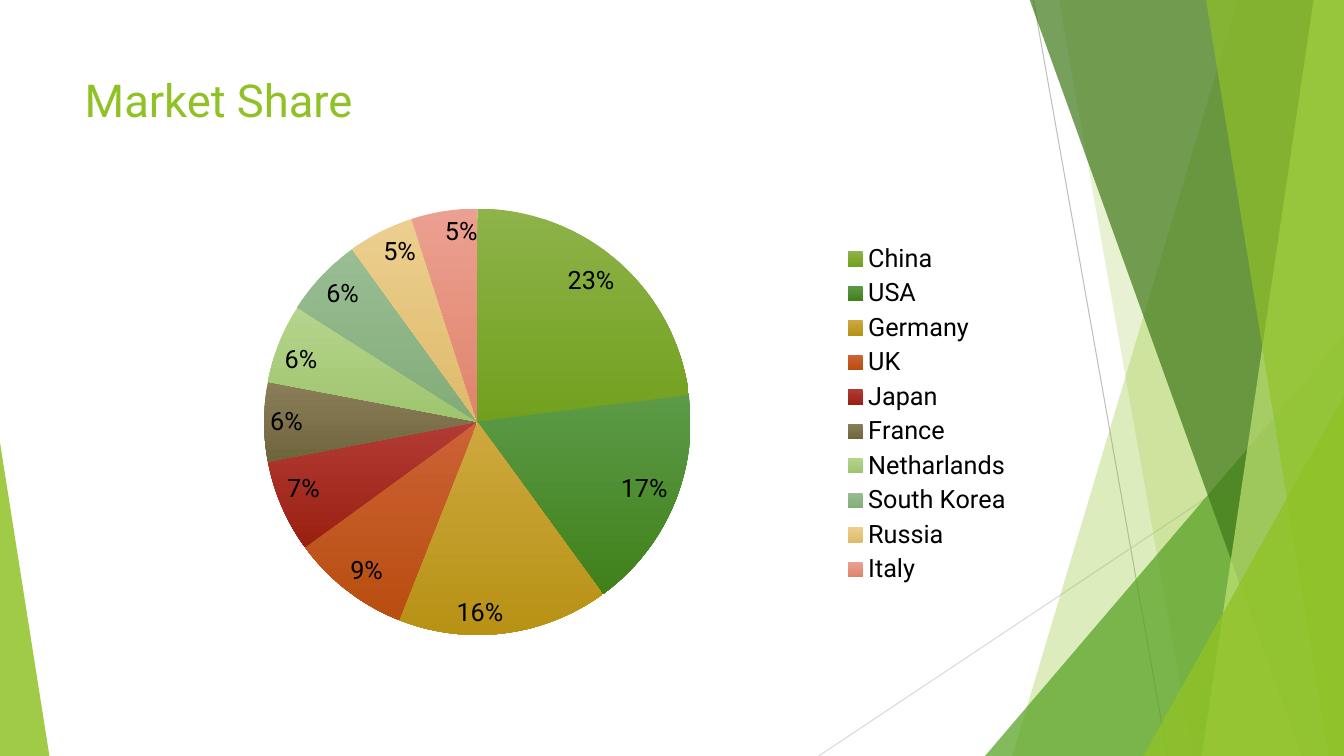
"""Build the Market Share slide: a pie chart beside a faceted green border."""
from lxml import etree
from pptx import Presentation
from pptx.chart.data import CategoryChartData
from pptx.dml.color import RGBColor
from pptx.enum.chart import XL_CHART_TYPE as ChartType
from pptx.enum.chart import XL_LABEL_POSITION as LabelPosition
from pptx.enum.chart import XL_LEGEND_POSITION as LegendPosition
from pptx.enum.shapes import MSO_CONNECTOR as Connector
from pptx.enum.shapes import MSO_SHAPE as Shape
from pptx.enum.text import MSO_ANCHOR as Anchor
from pptx.enum.text import MSO_AUTO_SIZE as AutoSize
from pptx.enum.text import PP_ALIGN as Align
from pptx.oxml.ns import qn
from pptx.util import Inches, Pt

WIDTH, HEIGHT, TOP = 13.33, 7.5, -0.01
THEME = {
    "font": "Roboto",
    "title_size": Pt(32.4),
    "chart_size": Pt(18),
    "text": "000000",
    "lime": "90C226",
    "green": "54A021",
    "forest": "3F7819",
    "pale": "C0E474",
    "dark_line": "BFBFBF",
    "light_line": "D9D9D9",
}
MARKET = [
    ("China", 23, "8DB349", "72A01E"),
    ("USA", 17, "5C9A47", "40811A"),
    ("Germany", 16, "CEA83E", "B79214"),
    ("UK", 9, "CC6236", "B94E10"),
    ("Japan", 7, "B23B35", "9A2011"),
    ("France", 6, "8A7E58", "6F653D"),
    ("Netharlands", 6, "B5D48C", "9FC56F"),
    ("South Korea", 6, "9ABD94", "82AC78"),
    ("Russia", 5, "ECCF8F", "DEBA6A"),
    ("Italy", 5, "ECA091", "DF846C"),
]
LINES = [
    (10.25, 0, 11.58, HEIGHT, "dark_line"),
    (WIDTH, 4.03, 8.12, HEIGHT, "light_line"),
]
FACETS = [
    ("band", 12.28, 10.04, "lime", 30),
    ("band", 10.5, 11.83, "lime", 20),
    ("triangle", (9.77, 3.33, 3.56, 4.17), 1, "green", 72),
    ("band", 10.21, 12.91, "forest", 70),
    ("band", 13.03, 11.92, "pale", 70),
    ("band", 11.96, 13.18, "lime", 65),
    ("triangle", (11.34, 3.93, 1.99, 3.57), 1, "lime", 80),
    ("triangle", (0, 4.39, 0.49, 3.11), 0, "lime", 85),
]


def paint(shape, color, opacity):
    """Give a shape a see-through fill without outline or shadow."""
    shape.shadow.inherit = False
    shape.line.fill.background()
    shape.fill.solid()
    shape.fill.fore_color.rgb = RGBColor.from_string(THEME[color])
    rgb = shape._element.spPr.find(qn("a:solidFill")).find(qn("a:srgbClr"))
    etree.SubElement(rgb, qn("a:alpha"), val=str(opacity * 1000))


def set_font(font, size, color):
    """Apply the theme font with a size and a colour."""
    for name, value in {"name": THEME["font"], "size": size, "bold": False}.items():
        setattr(font, name, value)
    font.color.rgb = RGBColor.from_string(color)


presentation = Presentation()
presentation.slide_width = Inches(WIDTH)
presentation.slide_height = Inches(HEIGHT)
slide = presentation.slides.add_slide(presentation.slide_layouts[5])

for x1, y1, x2, y2, color in LINES:
    ends = [Inches(value) for value in (x1, y1, x2, y2)]
    connector = slide.shapes.add_connector(Connector.STRAIGHT, *ends)
    connector.line.width = Pt(0.75)
    connector.line.color.rgb = RGBColor.from_string(THEME[color])
    etree.SubElement(connector._element.spPr, qn("a:effectLst"))

for kind, first, second, color, opacity in FACETS:
    if kind == "band":
        builder = slide.shapes.build_freeform(Inches(first), Inches(TOP))
        corners = [(WIDTH, TOP), (WIDTH, HEIGHT), (second, HEIGHT)]
        builder.add_line_segments([(Inches(x), Inches(y)) for x, y in corners])
        facet = builder.convert_to_shape()
    else:
        box = [Inches(value) for value in first]
        facet = slide.shapes.add_shape(Shape.ISOSCELES_TRIANGLE, *box)
        facet.adjustments[0] = second
    paint(facet, color, opacity)

title = slide.shapes.title
for name, value in {"left": 0.74, "top": 0.67, "width": 9.4, "height": 0.55}.items():
    setattr(title, name, Inches(value))
title.text_frame.text = "Market Share"
title.text_frame.auto_size = AutoSize.NONE
title.text_frame.vertical_anchor = Anchor.TOP
paragraph = title.text_frame.paragraphs[0]
paragraph.alignment = Align.LEFT
set_font(paragraph.runs[0].font, THEME["title_size"], THEME["lime"])

chart_data = CategoryChartData()
chart_data.categories = [country for country, *_ in MARKET]
chart_data.add_series("Series 1", [share for _, share, *_ in MARKET])
chart = slide.shapes.add_chart(
    ChartType.PIE, Inches(0.74), Inches(1.61), Inches(9.4), Inches(5), chart_data
).chart
chart.has_title = False
set_font(chart.font, THEME["chart_size"], THEME["text"])
chart.has_legend = True
chart.legend.position = LegendPosition.RIGHT
chart.legend.include_in_layout = False

plot = chart.plots[0]
plot.vary_by_categories = True
plot.has_data_labels = True
label_format = {
    "show_percentage": True,
    "show_value": False,
    "number_format": "0%",
    "number_format_is_linked": False,
    "position": LabelPosition.INSIDE_END,
}
for name, value in label_format.items():
    setattr(plot.data_labels, name, value)
set_font(plot.data_labels.font, THEME["chart_size"], THEME["text"])

for index, (_, _, *shades) in enumerate(MARKET):
    slice_format = plot.series[0].points[index].format
    slice_format.line.fill.background()
    slice_format.fill.gradient()
    slice_format.fill.gradient_angle = 270
    for stop, shade in zip(slice_format.fill.gradient_stops, shades):
        stop.color.rgb = RGBColor.from_string(shade)

plot_area = chart._chartSpace.chart.plotArea
for old_layout in plot_area.findall(qn("c:layout")):
    plot_area.remove(old_layout)
layout = etree.Element(qn("c:layout"))
plot_area.insert(0, layout)
manual = etree.SubElement(layout, qn("c:manualLayout"))
layout_values = {
    "layoutTarget": "inner", "xMode": "edge", "yMode": "edge",
    "x": 0.2, "y": 0.09, "w": 0.45, "h": 0.85,
}
for name, value in layout_values.items():
    etree.SubElement(manual, qn(f"c:{name}"), val=str(value))

presentation.save("out.pptx")
